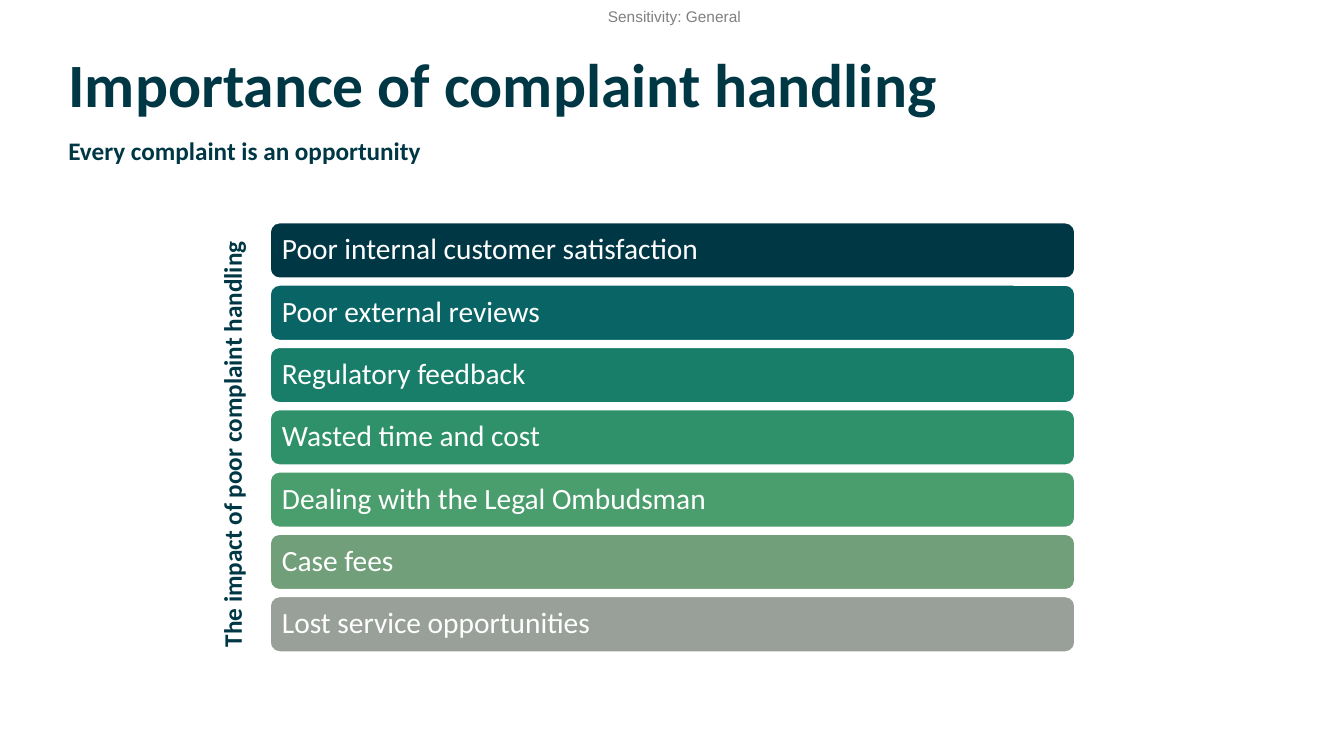
"""Build the slide on the importance of complaint handling."""
from pptx import Presentation
from pptx.dml.color import RGBColor
from pptx.enum.shapes import MSO_SHAPE
from pptx.enum.text import MSO_ANCHOR, PP_ALIGN
from pptx.util import Inches, Pt

ROUNDED = MSO_SHAPE.ROUNDED_RECTANGLE
LEFT, CENTER = PP_ALIGN.LEFT, PP_ALIGN.CENTER
TOP, MIDDLE = MSO_ANCHOR.TOP, MSO_ANCHOR.MIDDLE

NAVY = RGBColor(0x00, 0x37, 0x45)
WHITE = RGBColor(0xFF, 0xFF, 0xFF)
GREY = RGBColor(0x80, 0x80, 0x80)

IMPACTS = [
    ("Poor internal customer satisfaction", NAVY),
    ("Poor external reviews", RGBColor(0x09, 0x65, 0x65)),
    ("Regulatory feedback", RGBColor(0x18, 0x7E, 0x6A)),
    ("Wasted time and cost", RGBColor(0x2E, 0x91, 0x6A)),
    ("Dealing with the Legal Ombudsman", RGBColor(0x4A, 0x9D, 0x6C)),
    ("Case fees", RGBColor(0x71, 0x9F, 0x7A)),
    ("Lost service opportunities", RGBColor(0x99, 0xA0, 0x99)),
]

MARGIN = 0.58
BAR_LEFT, BAR_TOP, BAR_WIDTH, BAR_HEIGHT = 2.68, 2.21, 7.98, 0.55
BAR_PITCH = 0.618


def write(shape, text, size, color=NAVY, bold=False, font="Calibri",
          align=LEFT, anchor=TOP, spacing=1.0, inset=(0.1, 0.05)):
    """Put one formatted paragraph into a shape."""
    frame = shape.text_frame
    frame.word_wrap = True
    frame.vertical_anchor = anchor
    frame.margin_left = frame.margin_right = Inches(inset[0])
    frame.margin_top = frame.margin_bottom = Inches(inset[1])
    paragraph = frame.paragraphs[0]
    paragraph.alignment = align
    paragraph.line_spacing = spacing
    run = paragraph.add_run()
    run.text = text
    run.font.name, run.font.size, run.font.bold = font, Pt(size), bold
    run.font.color.rgb = color


prs = Presentation()
prs.slide_width, prs.slide_height = Inches(13.33), Inches(7.5)
slide = prs.slides.add_slide(prs.slide_layouts[5])
shapes = slide.shapes

title = shapes.title
title.left, title.top = Inches(MARGIN), Inches(0.48)
title.width, title.height = Inches(12.55), Inches(0.77)
write(title, "Importance of complaint handling", 44, bold=True,
      anchor=MIDDLE, spacing=0.9)

sensitivity = shapes.add_textbox(Inches(6.01), Inches(0.07), Inches(1.36), Inches(0.18))
write(sensitivity, "Sensitivity: General", 11, color=GREY, font="Arial",
      align=CENTER, inset=(0, 0))

subtitle = shapes.add_textbox(Inches(MARGIN), Inches(1.29), Inches(5.66), Inches(0.4))
write(subtitle, "Every complaint is an opportunity", 18, bold=True)

axis_label = shapes.add_textbox(Inches(-0.53), Inches(3.49), Inches(5.66), Inches(0.4))
axis_label.rotation = 270
write(axis_label, "The impact of poor complaint handling", 18, bold=True)

for row, (impact, color) in enumerate(IMPACTS):
    bar = shapes.add_shape(ROUNDED, Inches(BAR_LEFT), Inches(BAR_TOP + row * BAR_PITCH),
                           Inches(BAR_WIDTH), Inches(BAR_HEIGHT))
    bar.shadow.inherit = False
    bar.fill.solid()
    bar.fill.fore_color.rgb = color
    bar.line.color.rgb = WHITE
    bar.line.width = Pt(1)
    write(bar, impact, 21, color=WHITE, anchor=MIDDLE, spacing=0.9, inset=(0.09, 0.05))

prs.save("out.pptx")
